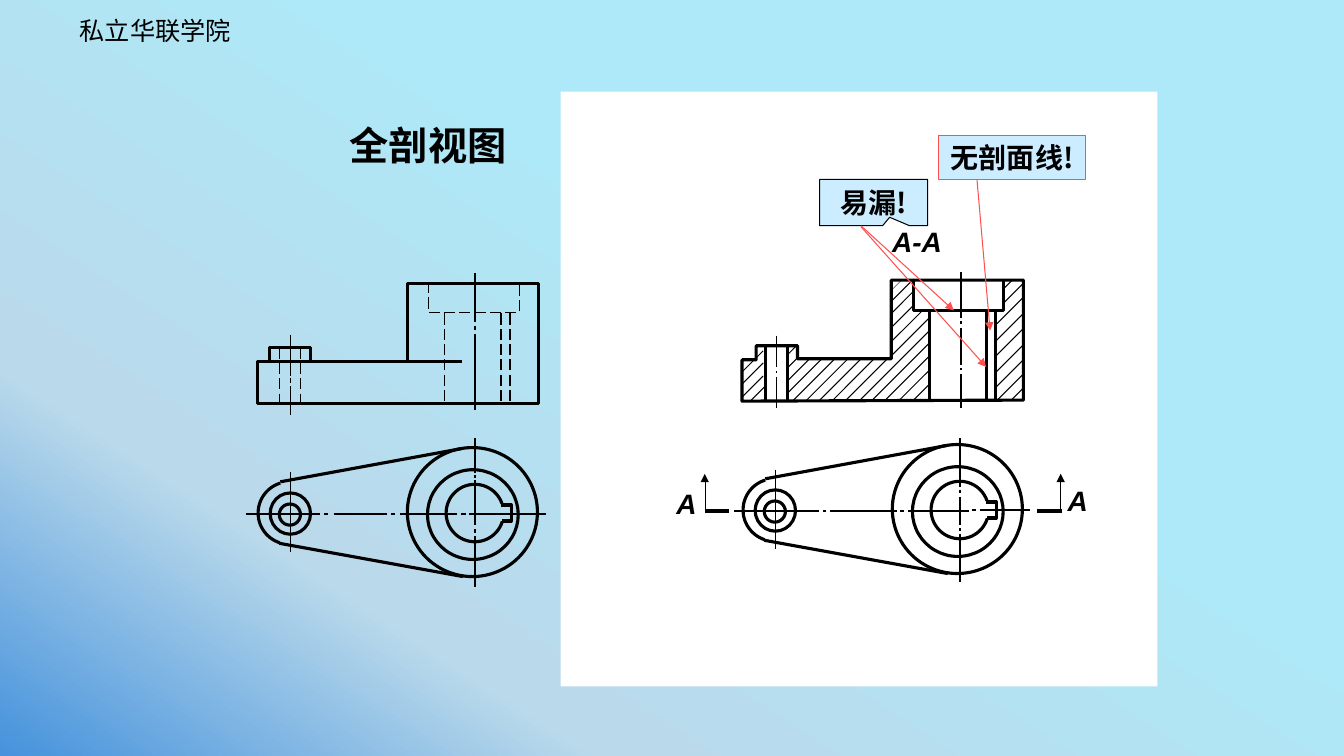
"""Slide comparing a plain view and a full section view of a lever."""
from copy import deepcopy
from math import cos, radians, sin

from lxml import etree
from pptx import Presentation
from pptx.dml.color import RGBColor
from pptx.enum.dml import MSO_LINE
from pptx.enum.shapes import MSO_CONNECTOR, MSO_SHAPE
from pptx.enum.text import MSO_ANCHOR, PP_ALIGN
from pptx.oxml.ns import qn
from pptx.util import Inches, Pt

STRAIGHT = MSO_CONNECTOR.STRAIGHT
RECT, OVAL = MSO_SHAPE.RECTANGLE, MSO_SHAPE.OVAL
CALLOUT = MSO_SHAPE.RECTANGULAR_CALLOUT
LONG_DASH = MSO_LINE.LONG_DASH
MIDDLE, CENTER = MSO_ANCHOR.MIDDLE, PP_ALIGN.CENTER
BLACK = RGBColor(0x00, 0x00, 0x00)
WHITE = RGBColor(0xFF, 0xFF, 0xFF)
RED = RGBColor(0xFF, 0x50, 0x50)
NOTE_BLUE = RGBColor(0xCC, 0xEC, 0xFF)
DEEP_BLUE = RGBColor(0x46, 0x92, 0xDC)
PALE_BLUE = RGBColor(0xBA, 0xDA, 0xEB)
CYAN = RGBColor(0xAD, 0xE9, 0xF8)
SC, JP = "Noto Sans CJK SC", "Noto Sans CJK JP"
THICK, AXIS, THIN = 2.25, 1, 0.75

prs = Presentation()
prs.slide_width, prs.slide_height = Inches(13.33), Inches(7.5)
s = prs.slides.add_slide(prs.slide_layouts[6])


def line(x1, y1, x2, y2, width, color=BLACK, dash=None, arrow=False):
    """Draw a straight line, with an arrowhead at its end if asked."""
    c = s.shapes.add_connector(STRAIGHT, Inches(x1), Inches(y1), Inches(x2), Inches(y2))
    c.line.color.rgb = color
    c.line.width = Pt(width)
    c.line.dash_style = dash
    if arrow:
        etree.SubElement(c.line._get_or_add_ln(), qn("a:tailEnd"), type="triangle")
    etree.SubElement(c._element.spPr, qn("a:effectLst"))


def outline(points, width=THICK, close=False, dash=None):
    """Draw an unfilled outline through the points."""
    pts = [(Inches(x), Inches(y)) for x, y in points]
    fb = s.shapes.build_freeform(*pts[0])
    fb.add_line_segments(pts[1:], close=close)
    sp = fb.convert_to_shape()
    sp.shadow.inherit = False
    sp.fill.background()
    sp.line.color.rgb = BLACK
    sp.line.width = Pt(width)
    sp.line.dash_style = dash


fill = s.background.fill
fill.gradient()
fill.gradient_angle = 57
stop_list = s._element.find(".//" + qn("a:gsLst"))
stop_list.append(deepcopy(stop_list[0]))
stops = [(0, DEEP_BLUE), (0.24, PALE_BLUE), (0.62, CYAN)]
for stop, (position, color) in zip(fill.gradient_stops, stops):
    stop.color.rgb = color
    stop.position = position

panel = s.shapes.add_shape(RECT, Inches(5.56), Inches(0.91), Inches(5.92), Inches(5.9))
panel.shadow.inherit = False
panel.fill.solid()
panel.fill.fore_color.rgb = WHITE
panel.line.fill.background()

labels = [
    ("私立华联学院", 0.74, 0.1, 2.94, 0.4, 18, JP, 0.05),
    ("全剖视图", 3.28, 1.15, 2.2, 0.57, 28, SC, 0.19),
    ("A", 6.61, 4.78, 0.37, 0.43, 20, "Arial", 0.1),
    ("A", 10.49, 4.75, 0.37, 0.43, 20, "Arial", 0.1),
    ("A-A", 8.75, 2.18, 0.78, 0.43, 20, "Arial", 0.1),
]
for text, x, y, w, h, size, font, indent in labels:
    tb = s.shapes.add_textbox(Inches(x), Inches(y), Inches(w), Inches(h))
    tf = tb.text_frame
    tf.word_wrap = font != "Arial"
    tf.margin_left = Inches(indent)
    p = tf.paragraphs[0]
    p.text = text
    p.font.size, p.font.name = Pt(size), font
    p.font.bold, p.font.italic = font != JP, font == "Arial"
    p.font.color.rgb = BLACK
    etree.SubElement(p.font._rPr, qn("a:ea"), typeface=font)

# Each hatch line rises at 45 degrees: left end, bottom end, run
hatches = [
    (7.36, 3.69, 0.21), (7.36, 3.81, 0.21), (7.36, 3.94, 0.21), (7.45, 3.97, 0.14),
    (7.81, 3.9, 0.34), (7.81, 3.78, 0.21), (7.81, 3.65, 0.1), (7.8, 3.53, 0.09),
    (7.86, 3.98, 0.42), (7.99, 3.98, 0.42), (8.12, 3.98, 0.42), (8.25, 3.98, 0.42),
    (8.38, 3.98, 0.42), (8.52, 3.98, 0.69), (8.65, 3.97, 0.56), (8.78, 3.97, 0.44),
    (8.92, 3.97, 0.29), (9.06, 3.97, 0.15), (8.85, 3.52, 0.37), (8.84, 3.39, 0.31),
    (8.85, 3.24, 0.2), (8.85, 3.1, 0.2), (8.84, 2.99, 0.2), (10.03, 3.97, 0.11),
    (9.89, 3.97, 0.26), (9.88, 3.84, 0.26), (9.88, 3.69, 0.26), (9.88, 3.53, 0.26),
    (9.88, 3.38, 0.26), (9.86, 3.24, 0.28), (9.95, 3.01, 0.2), (9.95, 2.87, 0.1),
]
for x, y, run in hatches:
    line(x, y, x + run, y - run, THIN)
line(8.84, 2.88, 8.94, 2.78, 0.25)

outline([(9.06, 2.78), (9.06, 3.08), (9.95, 3.08), (9.95, 2.78)])
for x in (9.22, 9.78, 9.87):
    line(x, 3.07, x, 3.98, THICK)
for x in (7.59, 7.81):
    line(x, 3.43, x, 3.99, THICK)
outline([(7.36, 3.98), (7.36, 3.57), (7.5, 3.57), (7.5, 3.43), (7.91, 3.43), (7.91, 3.56),
         (8.84, 3.56), (8.84, 2.78), (10.15, 2.78), (10.15, 3.97)], close=True)

for x, bar_start in ((6.99, 6.99), (10.52, 10.29)):
    line(bar_start, 5.07, bar_start + 0.24, 5.07, 3)
    line(x, 5.07, x, 4.7, 0.25, arrow=True)

outline([(4.04, 3.59), (4.04, 2.81), (5.34, 2.81), (5.34, 4), (2.55, 4), (2.55, 3.59), (4.49, 3.59)])
outline([(2.67, 3.59), (2.67, 3.45), (3.08, 3.45), (3.08, 3.59)])
outline([(4.25, 2.8), (4.25, 3.1), (5.15, 3.1), (5.15, 2.81)], AXIS, dash=LONG_DASH)
for x, top in ((2.77, 3.45), (2.98, 3.45), (4.41, 3.11), (4.97, 3.11), (5.06, 3.11)):
    line(x, top, x, 4.01, AXIS, dash=LONG_DASH)
line(4.49, 3.58, 4.58, 3.58, 1.5)
line(4.49, 3.59, 4.58, 3.59, THICK)

circles = [(4.04, 4.44, 1.29, 1.28), (4.24, 4.66, 0.9, 0.89), (2.68, 4.89, 0.4, 0.41), (2.77, 5, 0.21, 0.21)]
lever_end = [(2.87 + 0.31 * cos(radians(a)), 5.09 + 0.31 * sin(radians(a))) for a in range(108, 254, 5)]
bore = [(4.71 + 0.285 * cos(radians(a)), 5.09 + 0.285 * sin(radians(a))) for a in range(17, 344, 6)]
keyway = [(4.97, 5.01), (5.07, 5.01), (5.07, 5.17), (4.98, 5.17)]
for dx, dy in ((0, 0), (4.81, -0.03)):
    for x, y, w, h in circles:
        sp = s.shapes.add_shape(OVAL, Inches(x + dx), Inches(y + dy), Inches(w), Inches(h))
        sp.shadow.inherit = False
        sp.fill.background()
        sp.line.color.rgb = BLACK
        sp.line.width = Pt(THICK)
    for points in (lever_end, bore, keyway):
        outline([(x + dx, y + dy) for x, y in points])
    line(4.58 + dx, 4.45 + dy, 2.78 + dx, 4.78 + dy, THICK)
    line(2.77 + dx, 5.39 + dy, 4.59 + dx, 5.72 + dy, THICK)

vertical_axes = [
    (7.7, [(3.33, 3.64), (3.68, 3.7), (3.74, 4.05)]),
    (7.69, [(4.66, 5.45)]),
    (9.52, [(4.35, 4.83), (4.86, 4.89), (4.93, 5.21), (5.24, 5.27), (5.3, 5.77)]),
    (9.53, [(2.7, 3.15), (3.18, 3.21), (3.25, 3.62), (3.65, 3.67), (3.71, 4.05)]),
    (2.88, [(3.32, 3.73), (3.75, 3.8), (3.83, 4.12), (4.68, 5.48)]),
    (4.71, [(2.71, 3.19), (3.23, 3.27), (3.31, 4.07), (4.35, 4.69), (4.71, 4.74),
            (4.76, 5.21), (5.25, 5.29), (5.32, 5.82)]),
]
for x, dashes in vertical_axes:
    for top, bottom in dashes:
        line(x, top, x, bottom, AXIS)
horizontal_axes = [
    (5.1, [(2.44, 3.17), (3.21, 3.25), (3.31, 3.84), (3.88, 3.92), (3.97, 4.53),
           (4.57, 4.62), (4.65, 5.42)]),
    (5.07, [(7.28, 8.12), (8.16, 8.19), (8.23, 8.9), (8.93, 8.97), (9.01, 9.61)]),
    (5.06, [(9.64, 9.68), (9.72, 10.22)]),
]
for y, dashes in horizontal_axes:
    for left, right in dashes:
        line(left, y, right, y, AXIS)

notes = [
    (CALLOUT, "易漏!", 8.13, 1.78, 1.07, 0.46, BLACK),
    (RECT, "无剖面线!", 9.31, 1.34, 1.46, 0.44, RED),
]
for kind, text, x, y, w, h, color in notes:
    sp = s.shapes.add_shape(kind, Inches(x), Inches(y), Inches(w), Inches(h))
    if kind == CALLOUT:
        sp.adjustments[0], sp.adjustments[1] = 0.149, 0.318
    sp.shadow.inherit = False
    sp.fill.solid()
    sp.fill.fore_color.rgb = NOTE_BLUE
    sp.line.color.rgb = color
    sp.line.width = Pt(THIN)
    tf = sp.text_frame
    tf.word_wrap = False
    tf.vertical_anchor = MIDDLE
    p = tf.paragraphs[0]
    p.text = text
    p.alignment = CENTER
    p.font.size, p.font.name, p.font.bold = Pt(20), SC, True
    p.font.color.rgb = BLACK
    etree.SubElement(p.font._rPr, qn("a:ea"), typeface=SC)
for x1, y1, x2, y2 in ((8.54, 2.24, 9.46, 3.08), (8.54, 2.25, 9.78, 3.64), (9.69, 1.78, 9.82, 3.28)):
    line(x1, y1, x2, y2, THIN, RED, arrow=True)

prs.save("out.pptx")
